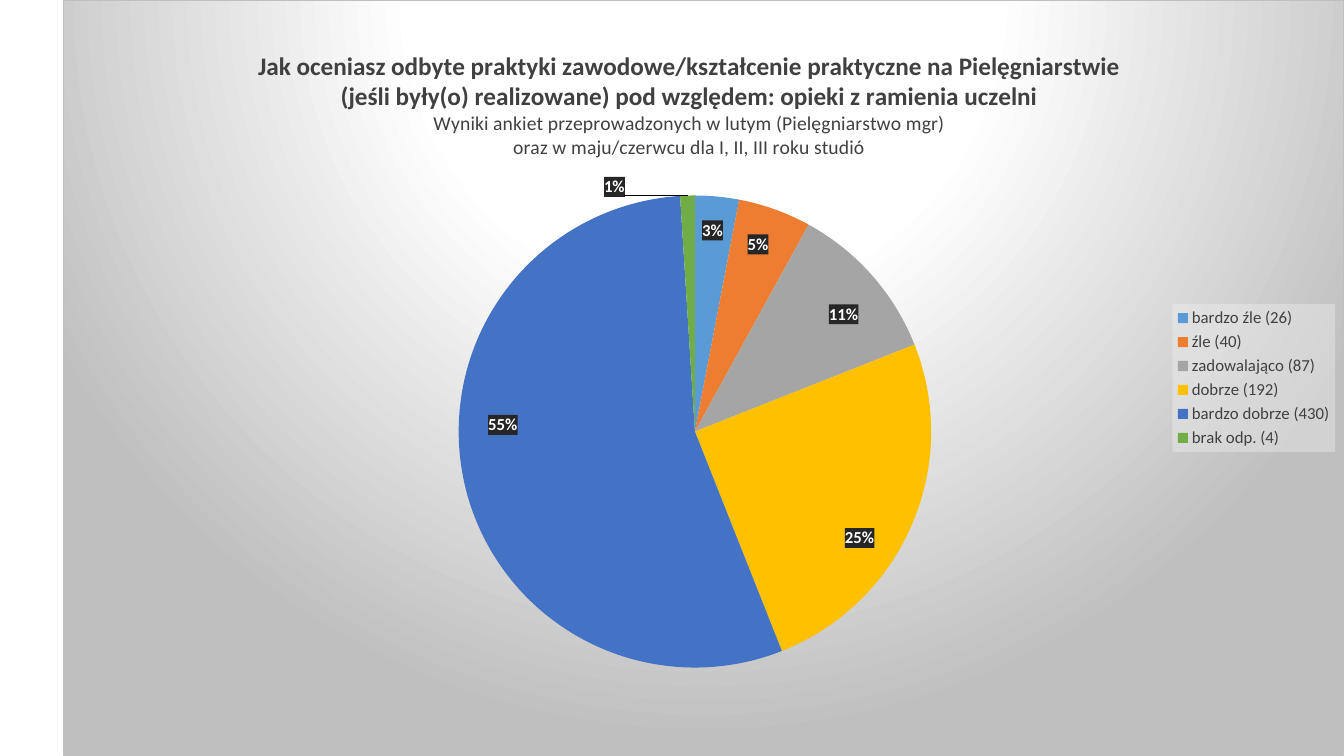
from copy import deepcopy
from math import cos, pi, sin

from pptx import Presentation
from pptx.chart.data import CategoryChartData
from pptx.dml.color import RGBColor
from pptx.enum.chart import XL_CHART_TYPE, XL_LABEL_POSITION, XL_LEGEND_POSITION
from pptx.oxml import parse_xml
from pptx.oxml.ns import nsdecls, qn
from pptx.util import Inches, Pt

PIE = XL_CHART_TYPE.PIE
CENTER = XL_LABEL_POSITION.CENTER
RIGHT = XL_LEGEND_POSITION.RIGHT
FONT = "Calibri"
BLACK = RGBColor(0x00, 0x00, 0x00)
DARK = RGBColor(0x40, 0x40, 0x40)
WHITE = RGBColor(0xFF, 0xFF, 0xFF)
BLUE = RGBColor(0x5B, 0x9B, 0xD5)
ORANGE = RGBColor(0xED, 0x7D, 0x31)
GREY = RGBColor(0xA5, 0xA5, 0xA5)
GOLD = RGBColor(0xFF, 0xC0, 0x00)
NAVY = RGBColor(0x44, 0x72, 0xC4)
GREEN = RGBColor(0x70, 0xAD, 0x47)

CHART_W, CHART_H = 12.71, 7.5
PIE_X, PIE_Y, RADIUS = 6.27, 4.28, 2.34

answers = [
    ("bardzo źle (26)", 3, BLUE, (6.45, 2.28)),
    ("źle (40)", 5, ORANGE, (6.89, 2.42)),
    ("zadowalająco (87)", 11, GREY, (7.75, 3.12)),
    ("dobrze (192)", 25, GOLD, (7.9, 5.34)),
    ("bardzo dobrze (430)", 55, NAVY, (4.37, 4.21)),
    ("brak odp. (4)", 1, GREEN, (5.47, 1.85)),
]
title_lines = [
    ("Jak oceniasz odbyte praktyki zawodowe/kształcenie praktyczne na Pielęgniarstwie", 18, True),
    ("(jeśli były(o) realizowane) pod względem: opieki z ramienia uczelni", 18, True),
    ("Wyniki ankiet przeprowadzonych w lutym (Pielęgniarstwo mgr)", 14, False),
    ("oraz w maju/czerwcu dla I, II, III roku studió", 14, False),
]


def chart_xml(tag, content):
    return parse_xml(f'<c:{tag} {nsdecls("c", "a")}>{content}</c:{tag}>')


def manual_layout(modes="", **shares):
    values = "".join(f'<c:{key} val="{share:.3f}"/>' for key, share in shares.items())
    return chart_xml("layout", f"<c:manualLayout>{modes}{values}</c:manualLayout>")


prs = Presentation()
prs.slide_width = Inches(13.33)
prs.slide_height = Inches(7.5)
slide = prs.slides.add_slide(prs.slide_layouts[6])

survey = CategoryChartData()
survey.categories = [answer[0] for answer in answers]
survey.add_series("Series 1", [answer[1] for answer in answers])
chart = slide.shapes.add_chart(
    PIE, prs.slide_width - Inches(CHART_W), 0, Inches(CHART_W), Inches(CHART_H), survey
).chart
chart.font.name = FONT
chart.font.size = Pt(10)
chart.font.color.rgb = BLACK

chart.has_title = True
heading = chart.chart_title.text_frame
for number, (line, size, bold) in enumerate(title_lines):
    paragraph = heading.add_paragraph() if number else heading.paragraphs[0]
    run = paragraph.add_run()
    run.text = line
    run.font.size = Pt(size)
    run.font.bold = bold
    run.font.name = FONT
    run.font.color.rgb = DARK

chart.has_legend = True
legend = chart.legend
legend.position = RIGHT
legend.include_in_layout = False
legend.font.name = FONT
legend.font.size = Pt(12)
legend.font.color.rgb = DARK
legend._element.find(qn("c:txPr")).addprevious(chart_xml(
    "spPr",
    '<a:solidFill><a:srgbClr val="F2F2F2"><a:alpha val="39000"/></a:srgbClr></a:solidFill>',
))

plot = chart.plots[0]
plot.vary_by_categories = True
series = plot.series[0]
labels = series.data_labels
labels.show_percentage = True
labels.show_value = False
labels.number_format = "0%"
labels.number_format_is_linked = False
labels.position = CENTER
labels.font.name = FONT
labels.font.size = Pt(12)
labels.font.bold = True
labels.font.color.rgb = WHITE
label_list = labels._element
label_list.find(qn("c:txPr")).addprevious(chart_xml(
    "spPr",
    '<a:solidFill><a:srgbClr val="262626"><a:alpha val="75000"/></a:srgbClr></a:solidFill>',
))
shared_settings = [part for part in label_list if part.tag != qn("c:showLeaderLines")]

total = sum(answer[1] for answer in answers)
passed = 0
for index, (name, percent, color, (label_x, label_y)) in enumerate(answers):
    slice_format = series.points[index].format
    slice_format.fill.solid()
    slice_format.fill.fore_color.rgb = color
    slice_format.line.fill.background()
    middle = 2 * pi * (passed + percent / 2) / total
    passed += percent
    label = chart_xml("dLbl", f'<c:idx val="{index}"/>')
    label.append(manual_layout(
        x=(label_x - PIE_X - RADIUS / 2 * sin(middle)) / CHART_W,
        y=(label_y - PIE_Y + RADIUS / 2 * cos(middle)) / CHART_H,
    ))
    for setting in shared_settings:
        label.append(deepcopy(setting))
    label_list.insert(index, label)

edge = '<c:xMode val="edge"/><c:yMode val="edge"/>'
title = chart.chart_title._element
plot_area = chart._chartSpace.chart.plotArea
for part in (title, plot_area):
    for old_layout in part.findall(qn("c:layout")):
        part.remove(old_layout)
title.find(qn("c:tx")).addnext(manual_layout(edge, x=0.15, y=0.06))
plot_area.insert(0, manual_layout(
    '<c:layoutTarget val="inner"/>' + edge, x=0.309, y=0.258, w=0.369, h=0.626
))

stops = "".join(
    f'<a:gs pos="{share * 1000}"><a:srgbClr val="{shade}"/></a:gs>'
    for share, shade in ((0, WHITE), (39, WHITE), (100, "BFBFBF"))
)
chart._chartSpace.chart.addnext(chart_xml(
    "spPr",
    f'<a:gradFill><a:gsLst>{stops}</a:gsLst><a:path path="circle">'
    '<a:fillToRect l="50000" t="-80000" r="50000" b="180000"/></a:path></a:gradFill>'
    '<a:ln w="9525"><a:solidFill><a:srgbClr val="BFBFBF"/></a:solidFill></a:ln>',
))

prs.save("out.pptx")
